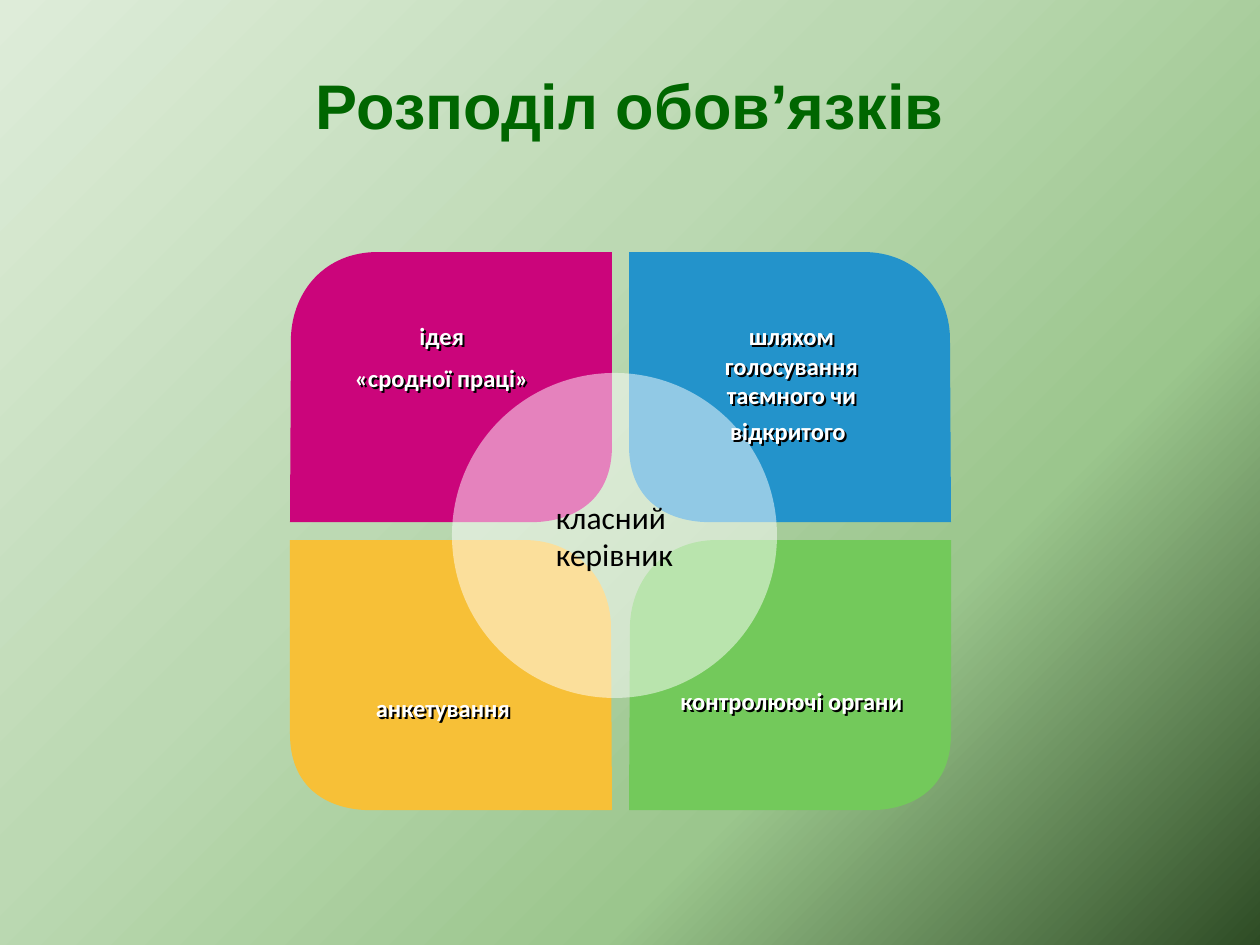
from dataclasses import dataclass

import lxml.etree
import pptx
import pptx.dml.color
import pptx.enum.shapes
import pptx.enum.text
import pptx.oxml.ns
import pptx.util

EMU_PER_PX = 914400 / 126
COLORS = {
    "magenta": "CB057B", "blue": "2393CB", "yellow": "F7C037", "green": "73C95B",
    "white": "FFFFFF", "black": "000000", "title": "006600",
}
BACKGROUND_STOPS = [(0, "DEECD9"), (40, "BCD9B3"), (70, "9BC68D"), (100, "2E4C25")]

# Petal grid and the outline of one petal: two curved corners, two square ones
PETAL_WIDTH, PETAL_HEIGHT = 322, 270
GRID_LEFT, GRID_TOP = 290, 252
COLUMN_GAP, ROW_GAP = 17, 18
CORNERS = [(0, 270), (1, 84), (88, 0), (322, 0), (322, 194), (247, 270)]
# Control points of the curves, by index of the segment between corners
CURVES = {1: [(3, 40), (34, 0)], 4: [(322, 246), (287, 268)]}


@dataclass
class Run:
    text: str
    size: int = 14
    bold: bool = True
    color: str = "white"
    font: str = "Calibri"


@dataclass
class Petal:
    column: int
    row: int
    color: str


@dataclass
class Label:
    left: int
    top: int
    width: int
    height: int
    paragraphs: list[list[Run]]
    shadow: bool = True
    anchor: pptx.enum.text.MSO_ANCHOR = pptx.enum.text.MSO_ANCHOR.TOP


PETALS = [
    Petal(0, 0, "magenta"), Petal(1, 0, "blue"),
    Petal(0, 1, "yellow"), Petal(1, 1, "green"),
]
END_SPACE = Run(" ", 18, False)
LABELS = [
    Label(321, 315, 247, 86, [[Run("ідея ")], [Run("«сродної праці» ")]]),
    Label(668, 315, 247, 139,
          [[Run("шляхом голосування таємного чи відкритого"), END_SPACE]]),
    Label(323, 680, 247, 50, [[Run("анкетування"), END_SPACE]]),
    Label(668, 680, 247, 72, [[Run("контролюючі органи")]]),
    Label(63, 53, 1134, 103,
          [[Run("Розподіл обов’язків", 36, True, "title", "Arial")]],
          False, pptx.enum.text.MSO_ANCHOR.MIDDLE),
]
CENTER_TEXT = [[Run(line, 18, False, "black")] for line in ("класний ", "керівник")]


def px(length: int) -> pptx.util.Emu:
    return pptx.util.Emu(round(length * EMU_PER_PX))


def rgb(name: str) -> pptx.dml.color.RGBColor:
    return pptx.dml.color.RGBColor.from_string(COLORS[name])


def add_child(parent, tag: str, **attributes: str):
    return lxml.etree.SubElement(parent, pptx.oxml.ns.qn(tag), attributes)


def paint(shape, color: str) -> None:
    shape.shadow.inherit = False
    shape.fill.solid()
    shape.fill.fore_color.rgb = rgb(color)
    shape.line.fill.background()


def add_background(slide) -> None:
    fill = slide.background.fill
    fill.gradient()
    fill.gradient_angle = 315
    stop_list = slide.element.find(".//" + pptx.oxml.ns.qn("a:gsLst"))
    for stop in list(stop_list):
        stop_list.remove(stop)
    for percent, color in BACKGROUND_STOPS:
        stop = add_child(stop_list, "a:gs", pos=str(percent * 1000))
        add_child(stop, "a:srgbClr", val=color)


def add_petal(slide, petal: Petal) -> None:
    mirrored = petal.column != petal.row

    def place(point: tuple[int, int]) -> tuple[int, int]:
        x, y = point
        return px(PETAL_WIDTH - x if mirrored else x), px(y)

    points = [place(corner) for corner in CORNERS]
    builder = slide.shapes.build_freeform(*points[0])
    builder.add_line_segments(points[1:], close=True)
    shape = builder.convert_to_shape(
        px(GRID_LEFT + petal.column * (PETAL_WIDTH + COLUMN_GAP)),
        px(GRID_TOP + petal.row * (PETAL_HEIGHT + ROW_GAP)))
    paint(shape, petal.color)

    # Bend the straight corner segments into cubic curves
    segments = list(shape.element.iter(pptx.oxml.ns.qn("a:lnTo")))
    for index, controls in CURVES.items():
        segment = segments[index]
        curve = lxml.etree.Element(pptx.oxml.ns.qn("a:cubicBezTo"))
        for x, y in map(place, controls):
            add_child(curve, "a:pt", x=str(int(x)), y=str(int(y)))
        segment.addprevious(curve)
        curve.append(segment[0])
        segment.getparent().remove(segment)


def add_text(text_frame, paragraphs: list[list[Run]], gap: int = 0) -> None:
    for index, runs in enumerate(paragraphs):
        paragraph = text_frame.add_paragraph() if index else text_frame.paragraphs[0]
        paragraph.alignment = pptx.enum.text.PP_ALIGN.CENTER
        if index:
            paragraph.space_before = pptx.util.Pt(gap)
        for item in runs:
            run = paragraph.add_run()
            run.text = item.text
            run.font.size = pptx.util.Pt(item.size)
            run.font.bold = item.bold
            run.font.color.rgb = rgb(item.color)
            run.font.name = item.font


def add_circle(slide) -> None:
    circle = slide.shapes.add_shape(
        pptx.enum.shapes.MSO_SHAPE.OVAL, px(452), px(373), px(325), px(325))
    paint(circle, "white")
    color = circle.element.spPr.find(".//" + pptx.oxml.ns.qn("a:srgbClr"))
    add_child(color, "a:alpha", val="50000")
    circle.text_frame.word_wrap = False
    circle.text_frame.vertical_anchor = pptx.enum.text.MSO_ANCHOR.MIDDLE
    add_text(circle.text_frame, CENTER_TEXT)


def add_label(slide, label: Label) -> None:
    box = slide.shapes.add_textbox(
        px(label.left), px(label.top), px(label.width), px(label.height))
    box.text_frame.word_wrap = True
    box.text_frame.vertical_anchor = label.anchor
    add_text(box.text_frame, label.paragraphs, gap=7)
    if label.shadow:
        # An unfilled box casts its shadow from the letters
        effects = add_child(box.element.spPr, "a:effectLst")
        shadow = add_child(effects, "a:outerShdw", dist="20500", dir="2700000")
        add_child(shadow, "a:srgbClr", val=COLORS["black"])


def main() -> None:
    presentation = pptx.Presentation()
    presentation.slide_width, presentation.slide_height = px(1260), px(945)
    slide = presentation.slides.add_slide(presentation.slide_layouts[6])
    add_background(slide)
    # Four petals under the translucent circle
    for petal in PETALS:
        add_petal(slide, petal)
    add_circle(slide)
    # Petal captions and the title
    for label in LABELS:
        add_label(slide, label)
    presentation.save("out.pptx")


if __name__ == "__main__":
    main()
